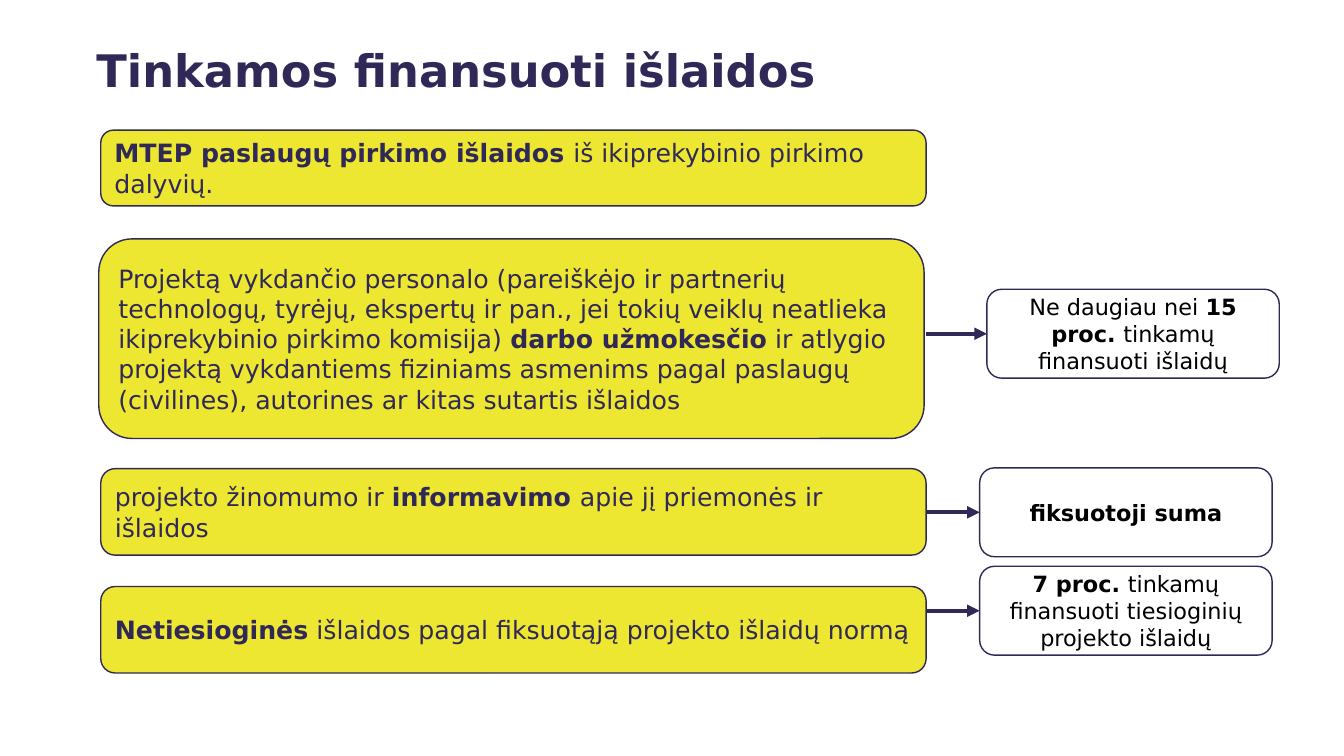
from dataclasses import dataclass

from lxml import etree
from pptx import Presentation
from pptx.dml.color import RGBColor
from pptx.enum.shapes import MSO_CONNECTOR, MSO_SHAPE
from pptx.enum.text import MSO_ANCHOR, PP_ALIGN
from pptx.oxml.ns import qn
from pptx.slide import Slide
from pptx.text.text import TextFrame
from pptx.util import Cm, Pt

ROUNDED = MSO_SHAPE.ROUNDED_RECTANGLE
STRAIGHT = MSO_CONNECTOR.STRAIGHT
MIDDLE = MSO_ANCHOR.MIDDLE
LEFT = PP_ALIGN.LEFT
CENTER = PP_ALIGN.CENTER

NAVY = RGBColor(0x30, 0x29, 0x57)
YELLOW = RGBColor(0xED, 0xE7, 0x31)
WHITE = RGBColor(0xFF, 0xFF, 0xFF)
BLACK = RGBColor(0x00, 0x00, 0x00)
FONT = "DejaVu Sans"

COST_WIDTH = 20.8
NOTE_WIDTH = 7.37
NOTE_HEIGHT = 2.24
ARROW_START = 23.34


@dataclass(frozen=True)
class Run:
    text: str
    bold: bool = False


@dataclass(frozen=True)
class TextStyle:
    size: int
    color: RGBColor
    alignment: PP_ALIGN = LEFT


@dataclass(frozen=True)
class Box:
    """A rounded box; lengths are in centimetres."""
    left: float
    top: float
    width: float
    height: float
    runs: tuple[Run, ...]


@dataclass(frozen=True)
class BoxStyle:
    fill: RGBColor
    text: TextStyle


TITLE_STYLE = TextStyle(32, NAVY)
COST_STYLE = BoxStyle(YELLOW, TextStyle(18, NAVY))
NOTE_STYLE = BoxStyle(WHITE, TextStyle(16, BLACK, CENTER))

COSTS = (
    Box(2.54, 3.28, COST_WIDTH, 1.91, (
        Run("MTEP paslaugų pirkimo išlaidos ", True),
        Run("iš ikiprekybinio pirkimo dalyvių."),
    )),
    Box(2.49, 6.02, COST_WIDTH, 5.03, (
        Run("Projektą vykdančio personalo (pareiškėjo ir partnerių technologų, "
            "tyrėjų, ekspertų ir pan., jei tokių veiklų neatlieka "
            "ikiprekybinio pirkimo komisija) "),
        Run("darbo užmokesčio", True),
        Run(" ir atlygio projektą vykdantiems fiziniams asmenims pagal "
            "paslaugų (civilines), autorines ar kitas sutartis išlaidos"),
    )),
    Box(2.54, 11.81, COST_WIDTH, 2.18, (
        Run("projekto žinomumo ir "),
        Run("informavimo ", True),
        Run("apie jį priemonės ir išlaidos"),
    )),
    Box(2.54, 14.78, COST_WIDTH, 2.18, (
        Run("Netiesioginės", True),
        Run(" išlaidos pagal fiksuotąją projekto išlaidų normą"),
    )),
)

NOTES = (
    Box(24.87, 7.29, NOTE_WIDTH, NOTE_HEIGHT, (
        Run("Ne daugiau nei "),
        Run("15 proc. ", True),
        Run("tinkamų finansuoti išlaidų"),
    )),
    Box(24.69, 11.79, NOTE_WIDTH, NOTE_HEIGHT, (
        Run("fiksuotoji suma", True),
    )),
    Box(24.69, 14.27, NOTE_WIDTH, NOTE_HEIGHT, (
        Run("7 proc. ", True),
        Run("tinkamų finansuoti tiesioginių projekto išlaidų"),
    )),
)


def write_runs(frame: TextFrame, runs: tuple[Run, ...], style: TextStyle) -> None:
    frame.word_wrap = True
    frame.vertical_anchor = MIDDLE
    paragraph = frame.paragraphs[0]
    paragraph.alignment = style.alignment
    for item in runs:
        run = paragraph.add_run()
        run.text = item.text
        run.font.name = FONT
        run.font.size = Pt(style.size)
        run.font.bold = item.bold
        run.font.color.rgb = style.color


def add_title(slide: Slide, text: str) -> None:
    title = slide.shapes.add_textbox(Cm(2.18), Cm(0.69), Cm(28.98), Cm(2.13))
    write_runs(title.text_frame, (Run(text, True),), TITLE_STYLE)


def add_box(slide: Slide, box: Box, style: BoxStyle) -> None:
    shape = slide.shapes.add_shape(
        ROUNDED, Cm(box.left), Cm(box.top), Cm(box.width), Cm(box.height))
    shape.shadow.inherit = False
    shape.fill.solid()
    shape.fill.fore_color.rgb = style.fill
    shape.line.color.rgb = NAVY
    shape.line.width = Pt(1)
    write_runs(shape.text_frame, box.runs, style.text)


def add_arrow_to(slide: Slide, note: Box) -> None:
    """Draw an arrow from the cost column to the middle of the note's left side."""
    middle = Cm(note.top + note.height / 2)
    arrow = slide.shapes.add_connector(
        STRAIGHT, Cm(ARROW_START), middle, Cm(note.left), middle)
    arrow.line.color.rgb = NAVY
    arrow.line.width = Pt(3)
    properties = arrow.element.spPr
    etree.SubElement(properties.find(qn("a:ln")), qn("a:tailEnd"), type="triangle")
    etree.SubElement(properties, qn("a:effectLst"))


def main() -> None:
    presentation = Presentation()
    presentation.slide_width = Cm(33.87)
    presentation.slide_height = Cm(19.05)
    slide = presentation.slides.add_slide(presentation.slide_layouts[6])
    add_title(slide, "Tinkamos finansuoti išlaidos")
    for cost in COSTS:
        add_box(slide, cost, COST_STYLE)
    for note in NOTES:
        add_box(slide, note, NOTE_STYLE)
        add_arrow_to(slide, note)
    presentation.save("out.pptx")


if __name__ == "__main__":
    main()
